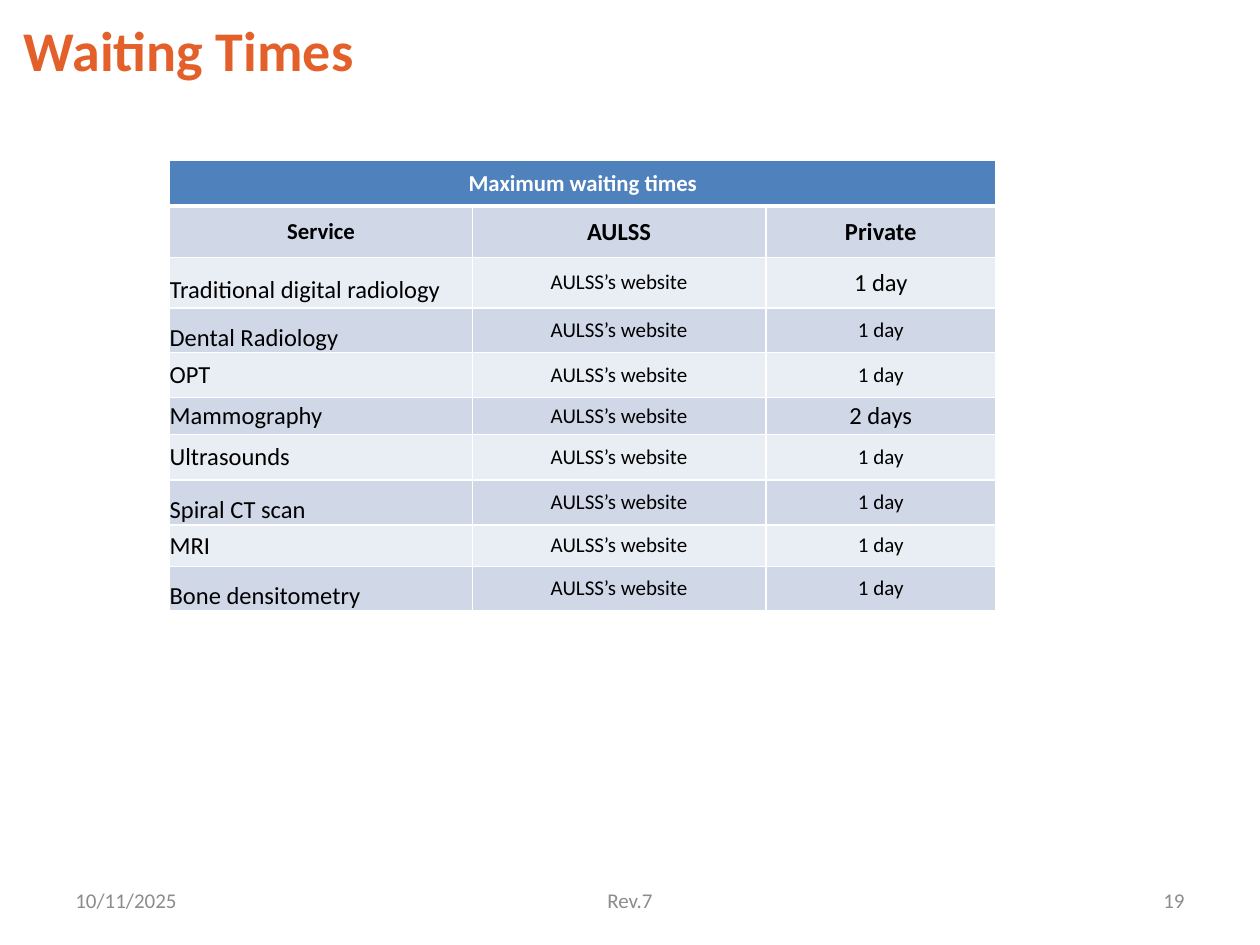
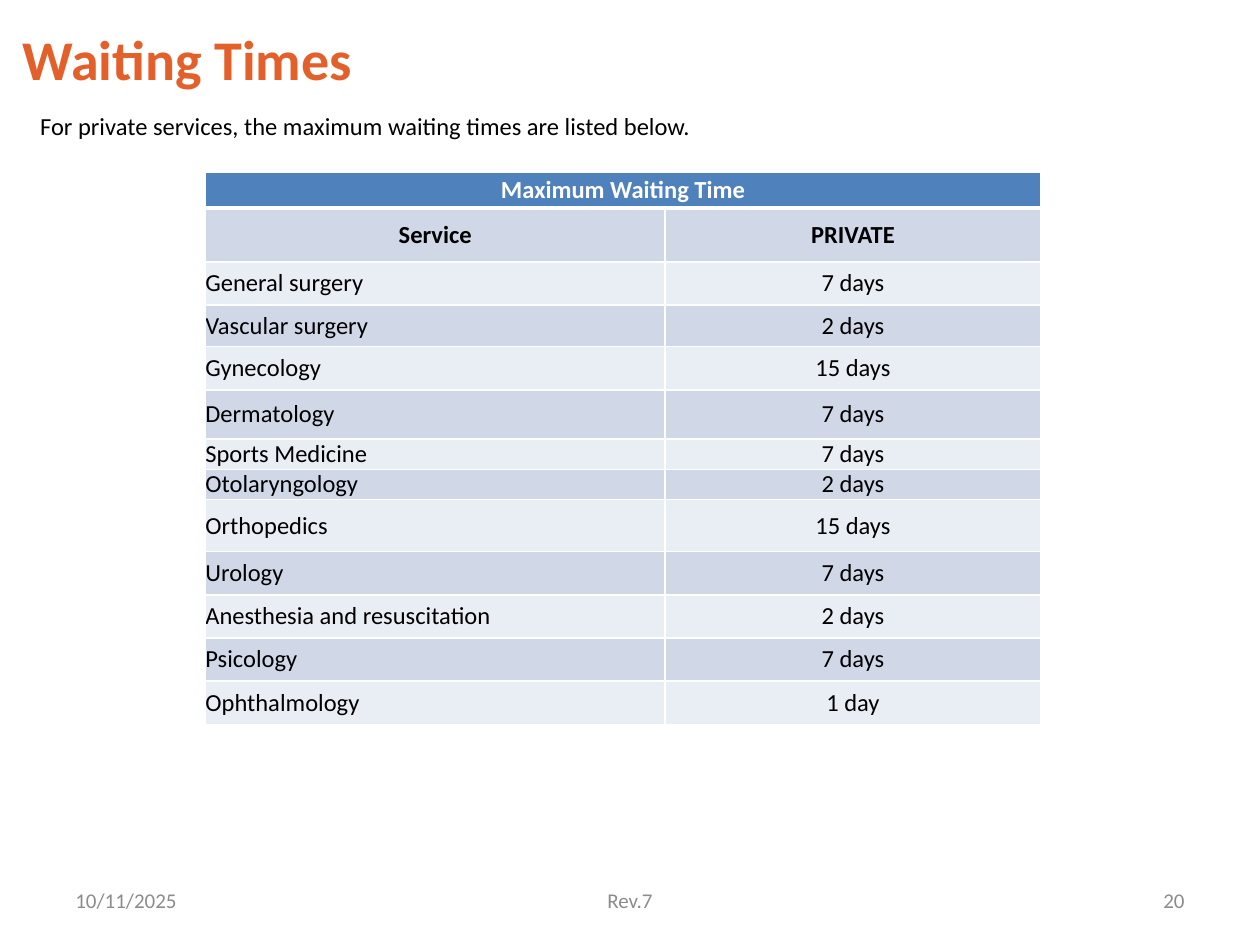
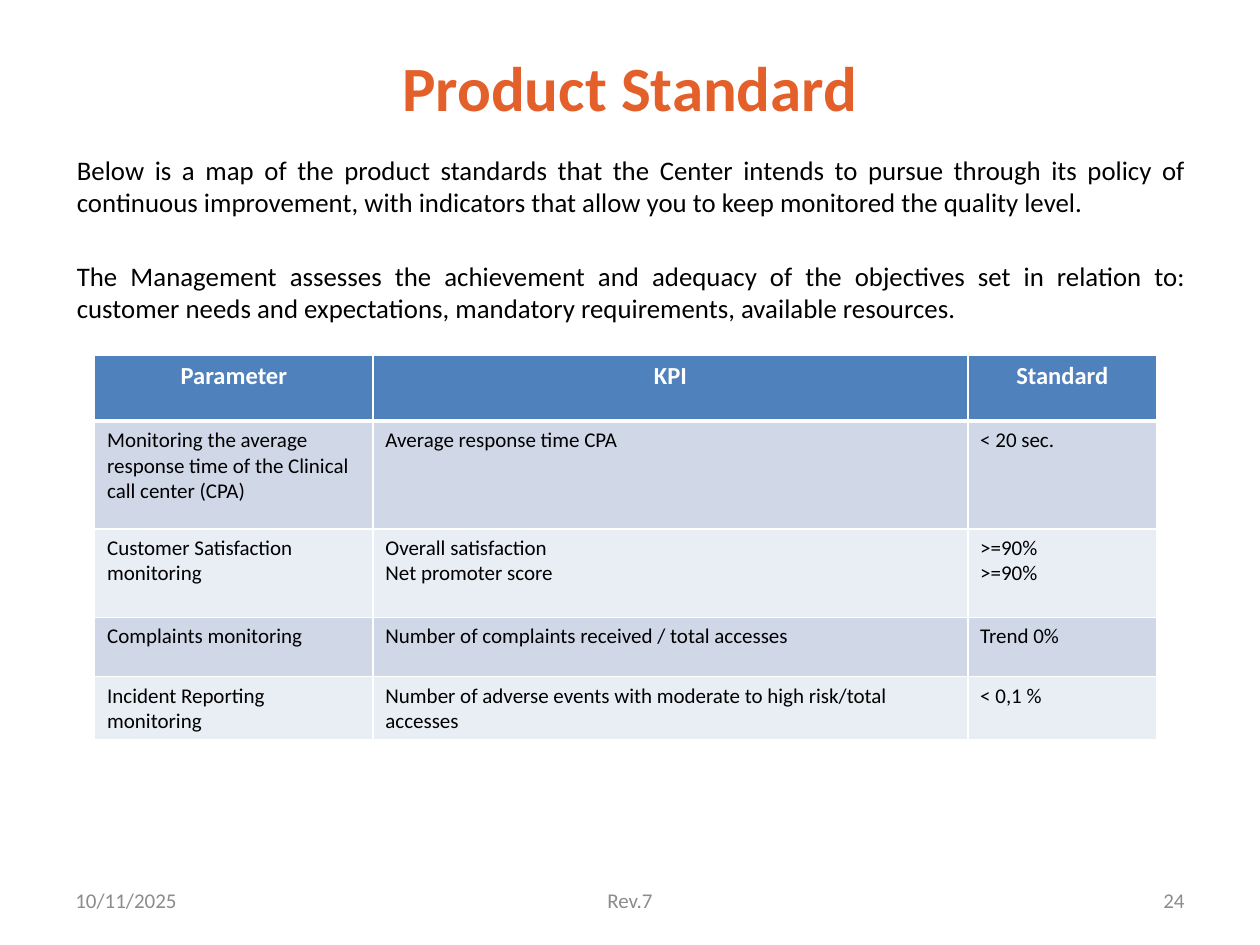
import pptx
import pptx.dml.color
import pptx.enum.text
import pptx.oxml
import pptx.oxml.ns
import pptx.util

Cm, Pt = pptx.util.Cm, pptx.util.Pt
ALIGN = pptx.enum.text.PP_ALIGN
ANCHOR = pptx.enum.text.MSO_ANCHOR

FONT = "Calibri"
ORANGE, GREY, BLACK, WHITE = "E3602A", "8C8C8C", "000000", "FFFFFF"
HEADER_BLUE = "4F81BD"
BAND_FILLS = ["E9EDF4", "D0D8E8"]


def color(hex_string):
    return pptx.dml.color.RGBColor.from_string(hex_string)


def format_paragraph(paragraph, size, text_color=BLACK, bold=False,
                     align=ALIGN.LEFT, spacing=None):
    paragraph.alignment = align
    paragraph.line_spacing = spacing
    font = paragraph.font
    font.name, font.size, font.bold = FONT, Pt(size), bold
    font.color.rgb = color(text_color)


def add_text(slide, box, text, size, anchor=ANCHOR.MIDDLE, gap=0, **style):
    """Add a text box; gap is the space between its paragraphs in points."""
    frame = slide.shapes.add_textbox(*map(Cm, box)).text_frame
    frame.word_wrap = True
    frame.vertical_anchor = anchor
    frame.text = text
    for index, paragraph in enumerate(frame.paragraphs):
        format_paragraph(paragraph, size, **style)
        if index:
            paragraph.space_before = Pt(gap)


def add_title(slide, box, text, size=32, align=ALIGN.LEFT):
    add_text(slide, box, text, size, text_color=ORANGE, bold=True, align=align)


def add_footer(slide, number):
    top, height = 17.65, 1.01
    parts = [(1.27, 5.93, "10/11/2025", ALIGN.LEFT),
             (8.68, 8.04, "Rev.7", ALIGN.CENTER),
             (18.2, 5.93, str(number), ALIGN.RIGHT)]
    for left, width, text, align in parts:
        add_text(slide, (left, top, width, height), text, 12,
                 text_color=GREY, align=align)


# Tables
def set_borders(cell, top, bottom):
    """Draw white borders; top and bottom widths are in points."""
    properties = cell._tc.get_or_add_tcPr()
    sides = [("lnL", 1), ("lnR", 1), ("lnT", top), ("lnB", bottom)]
    for index, (side, width) in enumerate(sides):
        line = pptx.oxml.parse_xml(
            f'<a:{side} {pptx.oxml.ns.nsdecls("a")} w="{Pt(width)}">'
            f'<a:solidFill><a:srgbClr val="{WHITE}"/></a:solidFill></a:{side}>')
        properties.insert(index, line)


def add_table(slide, origin, widths, heights, rows, cell_style,
              margins=(0, 0), anchor=ANCHOR.MIDDLE):
    """Add a banded table; cell_style(row, column) gives paragraph options."""
    left, top = origin
    table = slide.shapes.add_table(
        len(rows), len(widths), Cm(left), Cm(top),
        Cm(sum(widths)), Cm(sum(heights))).table
    table.horz_banding = False
    for column, width in zip(table.columns, widths):
        column.width = Cm(width)
    for row, height in zip(table.rows, heights):
        row.height = Cm(height)

    side_margin, end_margin = map(Cm, margins)
    for row_index, texts in enumerate(rows):
        for column_index in range(len(widths)):
            cell = table.cell(row_index, column_index)
            cell.margin_left = cell.margin_right = side_margin
            cell.margin_top = cell.margin_bottom = end_margin
            cell.vertical_anchor = anchor
            cell.fill.solid()
            cell.fill.fore_color.rgb = color(
                BAND_FILLS[row_index % 2] if row_index else HEADER_BLUE)
            set_borders(cell, 3 if row_index == 1 else 1,
                        1 if row_index else 3)
            if column_index < len(texts):
                cell.text = texts[column_index]
                for paragraph in cell.text_frame.paragraphs:
                    format_paragraph(
                        paragraph, text_color=BLACK if row_index else WHITE,
                        **cell_style(row_index, column_index))
    # A single header text spans the whole table
    if len(rows[0]) == 1:
        table.cell(0, 0).merge(table.cell(0, len(widths) - 1))


def waiting_style(row, column, size=14):
    is_heading = row < 2
    centered = is_heading or column > 0
    return {"size": size, "bold": is_heading,
            "align": ALIGN.CENTER if centered else ALIGN.LEFT}


# Slides
def build_diagnostics(slide):
    add_title(slide, (0.23, 0, 20.96, 1.98), "Waiting Times")
    website = "AULSS’s website"
    services = ["Traditional digital radiology", "Dental Radiology", "OPT",
                "Mammography", "Ultrasounds", "Spiral CT scan", "MRI",
                "Bone densitometry"]
    rows = [["Maximum waiting times"], ["Service", "AULSS", "Private"]]
    rows += [[service, website, "2 days" if service == "Mammography" else "1 day"]
             for service in services]
    large_private_rows = {2, 5}
    loose_service_rows = {2, 3, 7, 9}

    def style(row, column):
        if row == 0 or (row, column) == (1, 0):
            size = 13
        elif row == 1 or column == 0:
            size = 14
        else:
            size = 14 if column == 2 and row in large_private_rows else 12
        options = waiting_style(row, column, size)
        if column == 0 and row in loose_service_rows:
            options["spacing"] = 1.5
        return options

    add_table(slide, (3.42, 3.24), [6.1, 5.92, 4.63],
              [0.91, 1.04, 1.02, 0.9, 0.9, 0.75, 0.92, 0.9, 0.84, 0.88],
              rows, style)


def build_private_visits(slide):
    add_title(slide, (0.2, 0.18, 20.96, 1.98), "Waiting Times")
    add_text(slide, (0.56, 2.11, 20.6, 0.86),
             "For private services, the maximum waiting times are listed below.",
             14, anchor=ANCHOR.TOP, align=ALIGN.JUSTIFY)
    rows = [["Maximum Waiting Time"], ["Service", "PRIVATE"],
            ["General surgery", "7 days"], ["Vascular surgery", "2 days"],
            ["Gynecology", "15 days"], ["Dermatology", "7 days"],
            ["Sports Medicine", "7 days"], ["Otolaryngology", "2 days"],
            ["Orthopedics", "15 days"], ["Urology", "7 days"],
            ["Anesthesia and resuscitation", "2 days"],
            ["Psicology", "7 days"], ["Ophthalmology", "1 day"]]
    heights = [0.71, 1.09, 0.87, 0.84, 0.87, 0.99, 0.61, 0.61, 1.05] + [0.87] * 4
    add_table(slide, (4.14, 3.48), [9.27, 7.57], heights, rows, waiting_style)


def build_product_standard(slide):
    add_title(slide, (1.27, 0.15, 22.86, 3.18), "Product Standard", 36,
              ALIGN.CENTER)
    add_text(slide, (1.3, 2.97, 22.86, 3.78),
             "Below is a map of the product standards that the Center intends "
             "to pursue through its policy of continuous improvement, with "
             "indicators that allow you to keep monitored the quality level.\n"
             "The Management assesses the achievement and adequacy of the "
             "objectives set in relation to: customer needs and expectations, "
             "mandatory requirements, available resources.",
             15.3, anchor=ANCHOR.TOP, gap=24, align=ALIGN.JUSTIFY)
    rows = [
        ["Parameter", "KPI", "Standard"],
        ["Monitoring the average response time of the Clinical call center (CPA)",
         "Average response time CPA", "< 20 sec."],
        ["Customer Satisfaction monitoring",
         "Overall satisfaction\nNet promoter score", ">=90%\n>=90%"],
        ["Complaints monitoring",
         "Number of complaints received / total accesses", "Trend 0%"],
        ["Incident Reporting monitoring",
         "Number of adverse events with moderate to high risk/total accesses",
         "< 0,1 %"]]

    def style(row, column):
        if row == 0:
            return {"size": 14, "bold": True, "align": ALIGN.CENTER}
        return {"size": 12}

    add_table(slide, (1.91, 7.16), [5.61, 11.99, 3.81],
              [1.33, 2.17, 1.79, 1.19, 1.26], rows, style,
              margins=(0.25, 0.13), anchor=ANCHOR.TOP)


def main():
    presentation = pptx.Presentation()
    presentation.slide_width, presentation.slide_height = Cm(25.4), Cm(19.05)
    blank_layout = presentation.slide_layouts[6]
    for number, build in [(19, build_diagnostics), (20, build_private_visits),
                          (24, build_product_standard)]:
        slide = presentation.slides.add_slide(blank_layout)
        build(slide)
        add_footer(slide, number)
    presentation.save("out.pptx")


if __name__ == "__main__":
    main()
